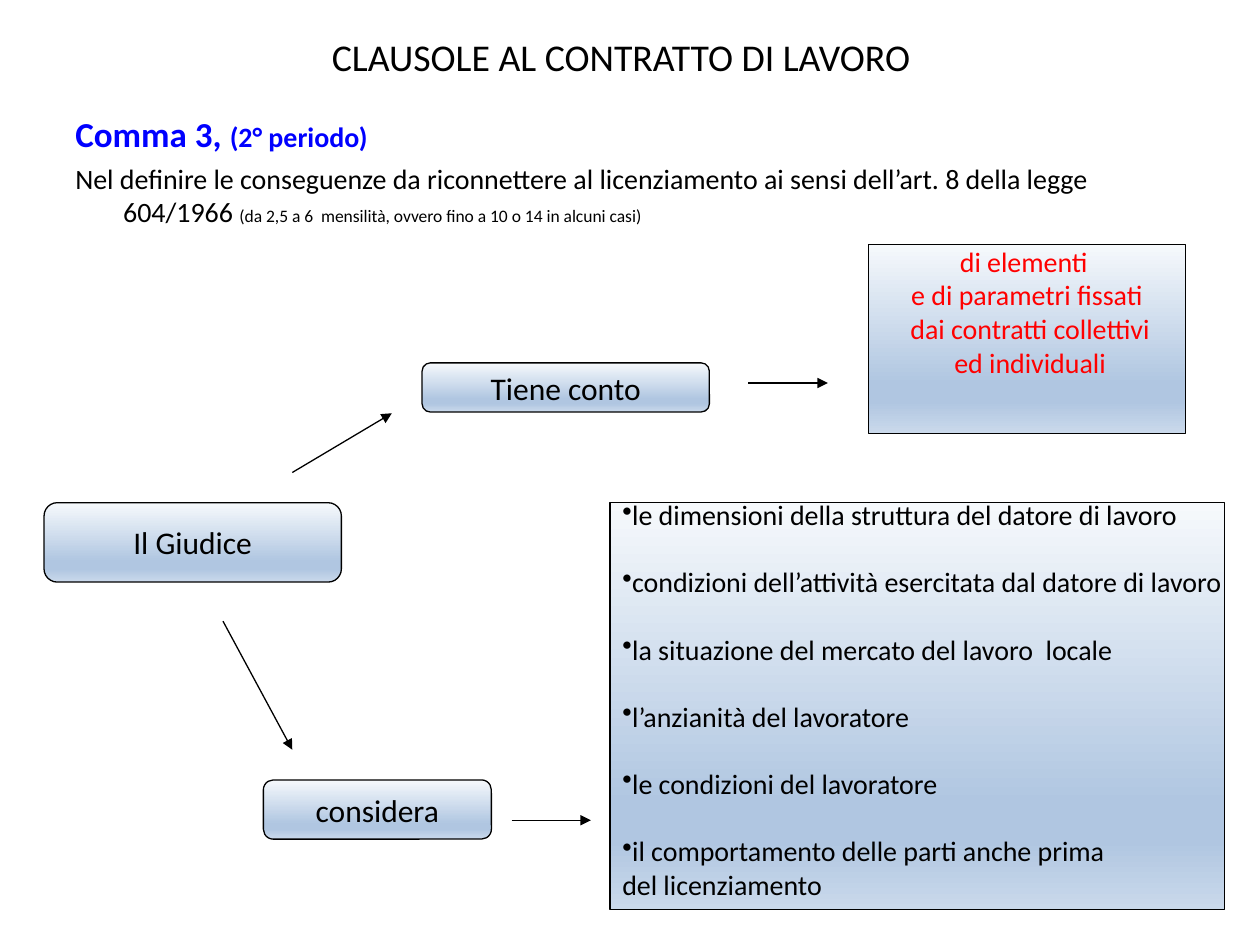
from lxml.etree import SubElement
from pptx import Presentation
from pptx.dml.color import RGBColor
from pptx.enum.shapes import MSO_CONNECTOR, MSO_SHAPE
from pptx.enum.text import MSO_ANCHOR, PP_ALIGN
from pptx.oxml.ns import qn
from pptx.util import Inches, Pt

BLACK = RGBColor(0x00, 0x00, 0x00)
BLUE = RGBColor(0x00, 0x00, 0xFF)
RED = RGBColor(0xFF, 0x00, 0x00)
GRADIENT = [
    (0, RGBColor(0xF6, 0xF9, 0xFC)),
    (74, RGBColor(0xB0, 0xC6, 0xE1)),
    (83, RGBColor(0xB0, 0xC6, 0xE1)),
    (100, RGBColor(0xCA, 0xD9, 0xEB)),
]
COLUMNS, ROWS = 100, 75


class Diagram:
    """Holds the style and the current slide; lengths are grid columns and rows."""

    font = "Calibri"
    line_width = Pt(0.75)

    def __init__(self, deck):
        self.slide = deck.slides.add_slide(deck.slide_layouts[6])
        self.column = deck.slide_width / COLUMNS
        self.row = deck.slide_height / ROWS

    def place(self, *lengths):
        units = (self.column, self.row) * 2
        return [round(length * unit) for length, unit in zip(lengths, units)]

    def style(self, run, size, color=BLACK, bold=False):
        run.font.name = self.font
        run.font.size = Pt(size)
        run.font.bold = bold
        run.font.color.rgb = color

    def set_lines(self, frame, lines, size, color=BLACK, align=PP_ALIGN.CENTER):
        frame.text = "\n".join(lines)
        for paragraph in frame.paragraphs:
            paragraph.alignment = align
            for run in paragraph.runs:
                self.style(run, size, color)

    def title(self, at, text):
        frame = self.slide.shapes.add_textbox(*self.place(*at)).text_frame
        frame.word_wrap = True
        frame.vertical_anchor = MSO_ANCHOR.MIDDLE
        self.set_lines(frame, [text], 21.6)

    def body(self, at, paragraphs):
        """Hanging paragraphs, each a list of (text, size, color, bold)."""
        frame = self.slide.shapes.add_textbox(*self.place(*at)).text_frame
        frame.word_wrap = True
        for index, pieces in enumerate(paragraphs):
            paragraph = frame.add_paragraph() if index else frame.paragraphs[0]
            paragraph.space_before = Pt(4)
            properties = paragraph._p.get_or_add_pPr()
            properties.set("marL", str(Inches(0.38)))
            properties.set("indent", str(-Inches(0.38)))
            for text, *look in pieces:
                run = paragraph.add_run()
                run.text = text
                self.style(run, *look)

    def box(self, at, lines, size=18, color=BLACK, align=PP_ALIGN.CENTER,
            kind=MSO_SHAPE.ROUNDED_RECTANGLE, anchor=MSO_ANCHOR.MIDDLE):
        shape = self.slide.shapes.add_shape(kind, *self.place(*at))
        shape.shadow.inherit = False
        shape.line.color.rgb = BLACK
        shape.line.width = self.line_width
        shape.fill.gradient()
        shape.fill.gradient_angle = 270
        stops = shape._element.spPr.find(".//" + qn("a:gsLst"))
        stops.clear()
        for share, stop_color in GRADIENT:
            stop = SubElement(stops, qn("a:gs"), pos=str(share * 1000))
            SubElement(stop, qn("a:srgbClr"), val=str(stop_color))
        frame = shape.text_frame
        frame.word_wrap = True
        frame.vertical_anchor = anchor
        frame.margin_top = frame.margin_bottom = frame.margin_right = 0
        frame.margin_left = 0 if align == PP_ALIGN.CENTER else Inches(0.1)
        self.set_lines(frame, lines, size, color, align)
        return frame

    def bullet_box(self, at, items):
        frame = self.box(at, items, 16, align=PP_ALIGN.LEFT,
                         kind=MSO_SHAPE.RECTANGLE, anchor=MSO_ANCHOR.BOTTOM)
        frame.margin_bottom = Inches(0.07)
        for index, paragraph in enumerate(frame.paragraphs):
            paragraph.space_before = Pt(19.2 if index else 0)
            SubElement(paragraph._p.get_or_add_pPr(), qn("a:buChar"), char="•")

    def arrow(self, start, end):
        arrow = self.slide.shapes.add_connector(
            MSO_CONNECTOR.STRAIGHT, *self.place(*start, *end))
        arrow.line.color.rgb = BLACK
        arrow.line.width = self.line_width
        SubElement(arrow.line._get_or_add_ln(), qn("a:tailEnd"), type="triangle")
        SubElement(arrow._element.spPr, qn("a:effectLst"))


def main():
    deck = Presentation()
    deck.slide_width, deck.slide_height = Inches(10), Inches(7.5)
    diagram = Diagram(deck)

    # Heading and the rule's opening words
    diagram.title((4.3, 2.1, 90, 4.7), "CLAUSOLE AL CONTRATTO DI LAVORO")
    diagram.body((5, 8.4, 90, 63.8), [
        [("Comma 3, ", 20, BLUE, True), ("(2° periodo)", 16, BLUE, True)],
        [("Nel definire le conseguenze da riconnettere al licenziamento "
          "ai sensi dell’art. 8 della legge 604/1966 ", 16),
         ("(da 2,5 a 6  mensilità, ovvero fino a 10 o 14 in alcuni casi)", 10)],
    ])

    # What the judge takes into account and considers
    diagram.box((68.9, 19.4, 25.2, 15),
                ["di elementi ", "e di parametri fissati",
                 " dai contratti collettivi", " ed individuali"],
                16, RED, kind=MSO_SHAPE.RECTANGLE, anchor=MSO_ANCHOR.TOP)
    diagram.bullet_box((48.4, 39.9, 48.8, 32.3), [
        "le dimensioni della struttura del datore di lavoro",
        "condizioni dell’attività esercitata dal datore di lavoro",
        "la situazione del mercato del lavoro  locale",
        "l’anzianità del lavoratore",
        "le condizioni del lavoratore",
        "il comportamento delle parti anche prima\vdel licenziamento",
    ])

    # The judge and the two actions
    diagram.box((3.5, 39.9, 23.6, 6.3), ["Il Giudice"])
    diagram.box((33.5, 28.8, 22.8, 3.9), ["Tiene conto"])
    diagram.box((20.9, 61.9, 18.1, 4.7), ["considera"])

    # Arrows between the steps
    for start, end in [
        ((59.4, 30.4), (65.7, 30.4)),
        ((40.6, 65.1), (46.9, 65.1)),
        ((23.2, 37.5), (31.1, 32.8)),
        ((17.7, 49.3), (23.2, 59.5)),
    ]:
        diagram.arrow(start, end)

    deck.save("out.pptx")


if __name__ == "__main__":
    main()
